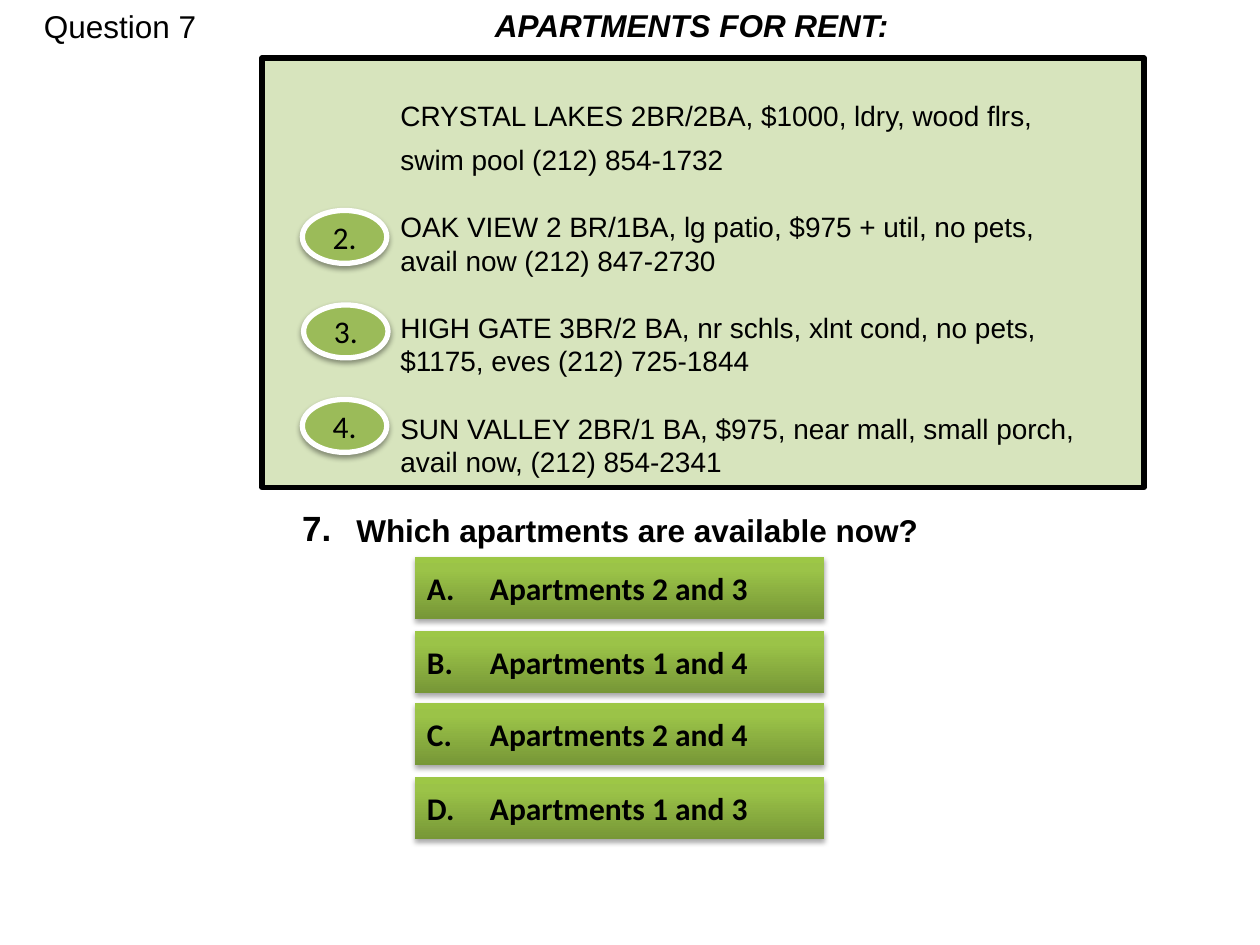
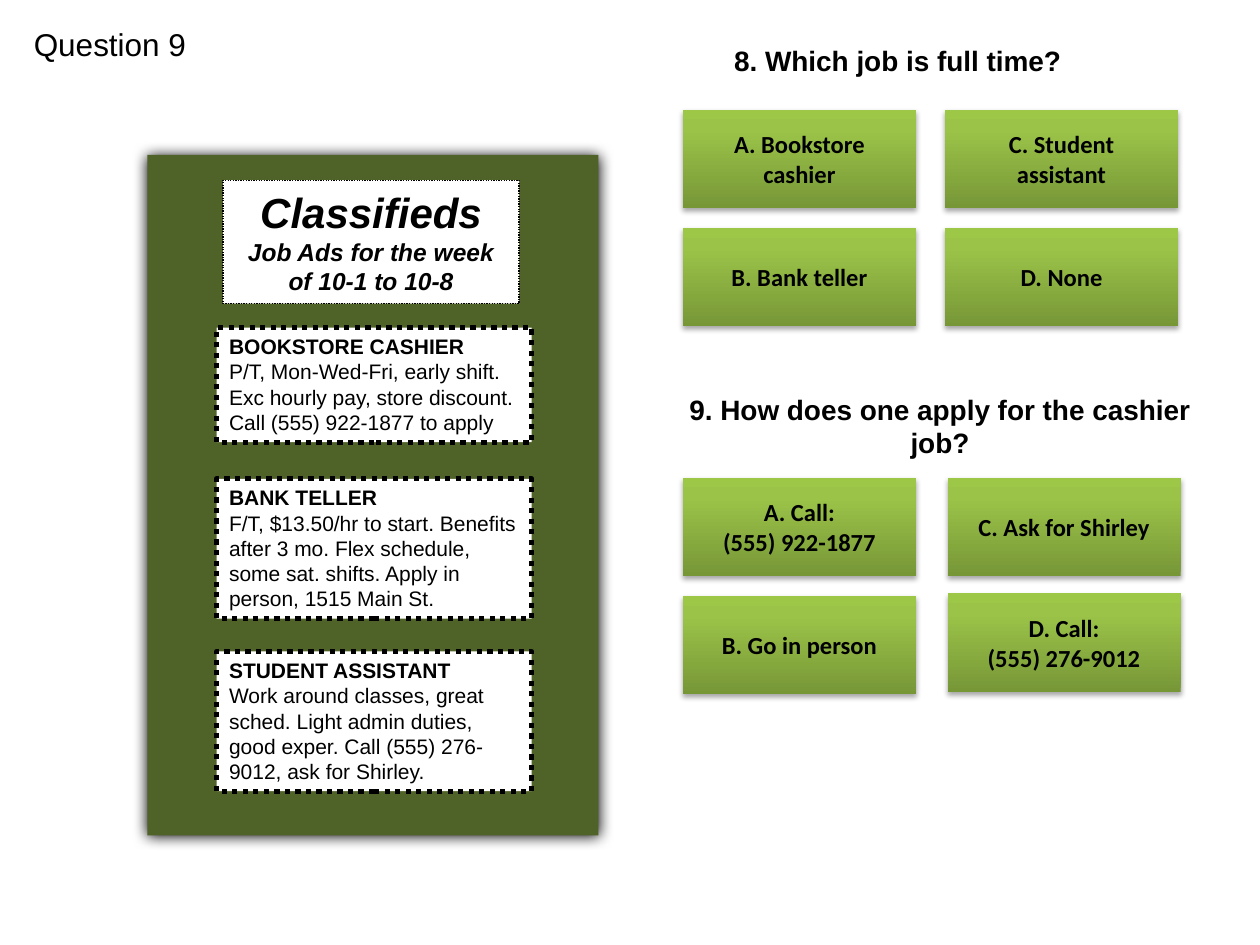
from copy import deepcopy

from lxml.etree import SubElement
from pptx import Presentation
from pptx.dml.color import RGBColor
from pptx.enum.dml import MSO_LINE
from pptx.enum.shapes import MSO_SHAPE
from pptx.enum.text import MSO_ANCHOR, PP_ALIGN
from pptx.oxml.ns import qn
from pptx.util import Inches, Pt

BLACK = RGBColor(0x00, 0x00, 0x00)
WHITE = RGBColor(0xFF, 0xFF, 0xFF)
PALE_GREEN = RGBColor(0xD7, 0xE4, 0xBD)
LEAF_GREEN = RGBColor(0x9B, 0xBB, 0x59)
DARK_GREEN = RGBColor(0x4F, 0x62, 0x28)
BUTTON_STOPS = [
    (0, RGBColor(0x77, 0x97, 0x37)),
    (0.8, RGBColor(0x9B, 0xC3, 0x48)),
    (1, RGBColor(0x9D, 0xC7, 0x46)),
]
BUTTON_SHADOW = (35, 3.1, 1.8)
BADGE_SHADOW = (38, 3.1, 1.6)
BOARD_SHADOW = (100, 8.5, 1)


def draw(page, kind, area, fill=None, line=None, weight=0, dash=None, shadow=None):
    left, top, width, height = map(Inches, area)
    if kind is None:
        return page.shapes.add_textbox(left, top, width, height)
    box = page.shapes.add_shape(kind, left, top, width, height)
    if fill is None:
        box.fill.gradient()
        box.fill.gradient_angle = 90
        stop_list = next(box.element.iter(qn("a:gsLst")))
        stop_list.append(deepcopy(stop_list[-1]))
        for stop, (position, color) in zip(box.fill.gradient_stops, BUTTON_STOPS):
            stop.position = position
            stop.color.rgb = color
    else:
        box.fill.solid()
        box.fill.fore_color.rgb = fill
    if line is None:
        box.line.fill.background()
    else:
        box.line.color.rgb = line
        box.line.width = Pt(weight)
        if dash:
            box.line.dash_style = dash
    box.shadow.inherit = False
    if shadow:
        opacity, blur, distance = shadow
        effects = next(box.element.iter(qn("a:effectLst")))
        outer = SubElement(effects, qn("a:outerShdw"), blurRad=str(Pt(blur)),
                           dist=str(Pt(distance)), dir="5400000", rotWithShape="0")
        color = SubElement(outer, qn("a:srgbClr"), val=str(BLACK))
        SubElement(color, qn("a:alpha"), val=str(opacity * 1000))
    return box


def write(box, text, size=18, font="Arial", bold=False, italic=False, align=PP_ALIGN.LEFT,
          anchor=MSO_ANCHOR.TOP, wrap=True, before=0, indent=0, tab=None):
    frame = box.text_frame
    frame.word_wrap = wrap
    frame.vertical_anchor = anchor
    for line in text.split("\n"):
        para = frame.paragraphs[0]
        if para.runs:
            para = frame.add_paragraph()
            para.space_before = Pt(before)
        para.alignment = align
        properties = para._p.get_or_add_pPr()
        properties.set("marL", str(Inches(indent)))
        properties.set("indent", "0")
        if tab:
            tabs = SubElement(properties, qn("a:tabLst"))
            SubElement(tabs, qn("a:tab"), pos=str(Inches(tab)), algn="l")
        span = para.add_run()
        span.text = line
        span.font.name = font
        span.font.size = Pt(size)
        span.font.bold = bold
        span.font.italic = italic
        span.font.color.rgb = BLACK


deck = Presentation()
deck.slide_width = Inches(10)
deck.slide_height = Inches(7.5)
blank = deck.slide_layouts[6]

page = deck.slides.add_slide(blank)
write(draw(page, None, (0.25, 0.01, 1.83, 0.4)), "Question 7")
write(draw(page, None, (3.83, 0, 3.43, 0.4)), "APARTMENTS FOR RENT:",
      bold=True, italic=True, wrap=False)

listings = draw(page, MSO_SHAPE.RECTANGLE, (2.08, 0.46, 7, 3.41), PALE_GREEN, BLACK, 3)
listings.text_frame.margin_top = Inches(0.32)
for first_line, second_line, gap in [
    ("CRYSTAL LAKES 2BR/2BA, $1000, ldry, wood flrs,", "swim pool (212) 854-1732", 6),
    ("OAK VIEW 2 BR/1BA, lg patio, $975 + util, no pets,", "avail now (212) 847-2730", 0),
    ("HIGH GATE 3BR/2 BA, nr schls, xlnt cond, no pets,", "$1175, eves (212) 725-1844", 0),
    ("SUN VALLEY 2BR/1 BA, $975, near mall, small porch,", "avail now, (212) 854-2341", 0),
]:
    write(listings, first_line, size=16, indent=1, before=19.2)
    write(listings, second_line, size=16, indent=1, before=gap)

for row, left in enumerate([2.4, 2.41, 2.4]):
    badge = draw(page, MSO_SHAPE.OVAL, (left, 1.67 + 0.75 * row, 0.67, 0.42),
                 LEAF_GREEN, WHITE, 3, shadow=BADGE_SHADOW)
    write(badge, f"{row + 2}.", font="Calibri", align=PP_ALIGN.CENTER,
          anchor=MSO_ANCHOR.MIDDLE, wrap=False)

write(draw(page, None, (2.3, 3.97, 0.44, 0.44)), "7.", size=20, bold=True, wrap=False)
write(draw(page, None, (2.73, 4.01, 4.7, 0.4)), "Which apartments are available now?",
      bold=True, wrap=False)

for top, answer in [
    (4.42, "A.\tApartments 2 and 3"),
    (5.01, "B.\tApartments 1 and 4"),
    (5.58, "C.\tApartments 2 and 4"),
    (6.17, "D.\tApartments 1 and 3"),
]:
    button = draw(page, MSO_SHAPE.ACTION_BUTTON_CUSTOM, (3.29, top, 3.25, 0.49),
                  shadow=BUTTON_SHADOW)
    write(button, answer, font="Calibri", bold=True, anchor=MSO_ANCHOR.MIDDLE, tab=0.33)

page = deck.slides.add_slide(blank)
write(draw(page, None, (0.17, 0.15, 1.83, 0.4)), "Question 9")

draw(page, MSO_SHAPE.RECTANGLE, (1.17, 1.23, 3.58, 5.4), DARK_GREEN, shadow=BOARD_SHADOW)
masthead = draw(page, MSO_SHAPE.RECTANGLE, (1.77, 1.43, 2.35, 0.98), WHITE, BLACK, 0.75,
                MSO_LINE.ROUND_DOT)
for text, size in [("Classifieds", 24), ("Job Ads for the week of 10-1 to 10-8", 14)]:
    write(masthead, text, size=size, bold=True, italic=True, align=PP_ALIGN.CENTER)

for top, height, job, details in [
    (2.6, 0.91, "BOOKSTORE CASHIER",
     "P/T, Mon-Wed-Fri, early shift. Exc hourly pay, store discount. "
     "Call (555) 922-1877 to apply"),
    (3.8, 1.11, "BANK TELLER",
     "F/T, $13.50/hr to start. Benefits after 3 mo. Flex schedule, "
     "some sat. shifts. Apply in person, 1515 Main St."),
    (5.17, 1.11, "STUDENT ASSISTANT",
     "Work around classes, great sched. Light admin duties, good exper. "
     "Call (555) 276-9012, ask for Shirley."),
]:
    advert = draw(page, MSO_SHAPE.RECTANGLE, (1.72, top, 2.5, height), WHITE, BLACK, 3,
                  MSO_LINE.ROUND_DOT)
    write(advert, job, size=12, bold=True)
    write(advert, details, size=12)

for area, question in [
    ((5.17, 0.27, 3.91, 0.42), "8. Which job is full time?"),
    ((5.25, 3.17, 4.42, 0.42), "9. How does one apply for the cashier job?"),
]:
    write(draw(page, None, area), question, size=16, bold=True, align=PP_ALIGN.CENTER,
          anchor=MSO_ANCHOR.MIDDLE, wrap=False)

for left, top, answer in [
    (5.42, 0.87, "A. Bookstore\ncashier"),
    (5.42, 1.81, "B. Bank teller"),
    (7.5, 0.87, "C. Student\nassistant"),
    (7.5, 1.81, "D. None"),
    (5.42, 3.79, "A. Call:\n(555) 922-1877"),
    (5.42, 4.73, "B. Go in person"),
    (7.52, 3.79, "C. Ask for Shirley"),
    (7.52, 4.71, "D. Call:\n(555) 276-9012"),
]:
    button = draw(page, MSO_SHAPE.ACTION_BUTTON_CUSTOM, (left, top, 1.85, 0.78),
                  shadow=BUTTON_SHADOW)
    write(button, answer, size=14, font="Calibri", bold=True, align=PP_ALIGN.CENTER,
          anchor=MSO_ANCHOR.MIDDLE, wrap=False)

deck.save("out.pptx")
